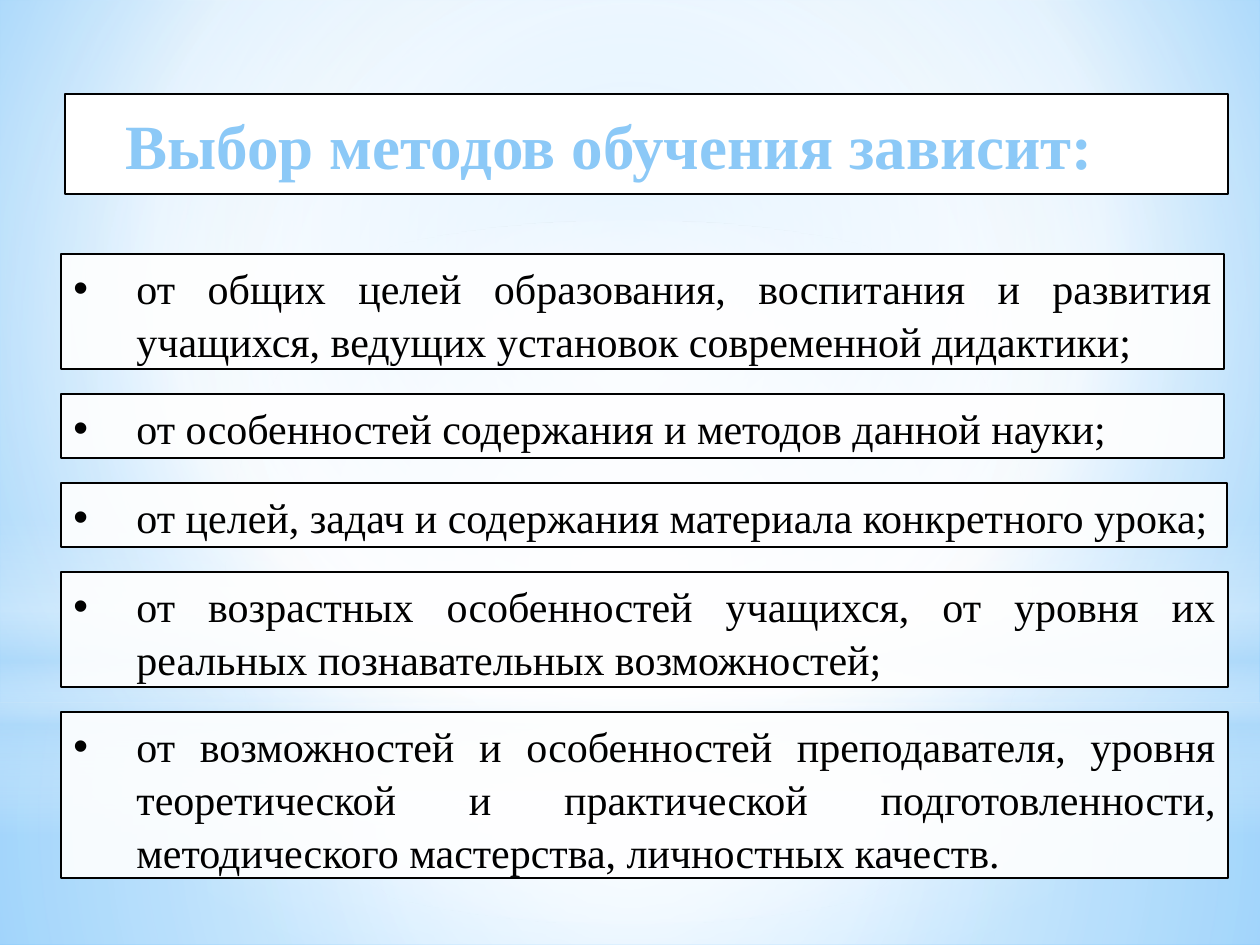
import pptx
import pptx.dml.color
import pptx.enum.shapes
import pptx.enum.text
import pptx.oxml
import pptx.oxml.ns
import pptx.util

WIDTH, HEIGHT = 1260, 945
EMU_PER_PX = 914400 / 126
FONT = "Times New Roman"
SHAPES = pptx.enum.shapes.MSO_SHAPE
ALIGN = pptx.enum.text.PP_ALIGN
qn = pptx.oxml.ns.qn

LINE, BOX_PADDING, BOX_GAP = 51, 13, 25
FACTORS = [  # text, number of lines, box width
    ("от общих целей образования, воспитания и развития учащихся, "
     "ведущих установок современной дидактики;", 2, 1163),
    ("от особенностей содержания и методов данной науки;", 1, 1163),
    ("от целей, задач и содержания материала конкретного урока;", 1, 1166),
    ("от возрастных особенностей учащихся, от уровня их реальных "
     "познавательных возможностей;", 2, 1167),
    ("от возможностей и особенностей преподавателя, уровня теоретической "
     "и практической подготовленности, методического мастерства, "
     "личностных качеств.", 3, 1167),
]


def px(length):
    return pptx.util.Emu(round(length * EMU_PER_PX))


def rgb(color):
    return pptx.dml.color.RGBColor.from_string(color)


def gradient(stops, center=None, angle=0):
    """Gradient fill from (position, colour, opacity) in percent; radial if center is given."""
    marks = "".join(
        f'<a:gs pos="{pos * 1000}"><a:srgbClr val="{color}">'
        f'<a:alpha val="{opacity * 1000}"/></a:srgbClr></a:gs>'
        for pos, color, opacity in stops)
    if center:
        sides = " ".join(f'{side}="{value * 1000}"' for side, value in zip("ltrb", center))
        course = f'<a:path path="circle"><a:fillToRect {sides}/></a:path>'
    else:
        course = f'<a:lin ang="{angle * 60000}" scaled="0"/>'
    return pptx.oxml.parse_xml(
        f'<a:gradFill {pptx.oxml.ns.nsdecls("a")} rotWithShape="1">'
        f'<a:gsLst>{marks}</a:gsLst>{course}</a:gradFill>')


def add_shape(slide, box, kind=SHAPES.RECTANGLE):
    shape = slide.shapes.add_shape(kind, *map(px, box))
    shape.shadow.inherit = False
    shape.line.fill.background()
    return shape


def style_panel(shape, opacity=100):
    """White panel with a thin black border."""
    shape.fill.solid()
    shape.fill.fore_color.rgb = rgb("FFFFFF")
    if opacity < 100:
        color = shape.fill._xPr.find(".//" + qn("a:srgbClr"))
        color.append(pptx.oxml.parse_xml(
            f'<a:alpha {pptx.oxml.ns.nsdecls("a")} val="{opacity * 1000}"/>'))
    shape.line.color.rgb = rgb("000000")
    shape.line.width = pptx.util.Pt(1.25)


def write(shape, text, size, color="000000", bold=False, align=ALIGN.LEFT,
          anchor=pptx.enum.text.MSO_ANCHOR.TOP, margin=0, indent=0,
          bullet=None, spacing=1.0):
    frame = shape.text_frame
    frame.word_wrap = True
    frame.auto_size = pptx.enum.text.MSO_AUTO_SIZE.NONE
    frame.vertical_anchor = anchor
    paragraph = frame.paragraphs[0]
    paragraph.alignment = align
    paragraph.line_spacing = spacing
    run = paragraph.add_run()
    run.text = text
    run.font.name = FONT
    run.font.size = pptx.util.Pt(size)
    run.font.bold = bold
    run.font.color.rgb = rgb(color)
    properties = paragraph._p.get_or_add_pPr()
    properties.set("marL", str(px(margin)))
    properties.set("indent", str(px(indent)))
    if bullet:
        for tag, name, value in (("a:buFont", "typeface", "Arial"),
                                 ("a:buChar", "char", bullet)):
            properties.append(pptx.oxml.parse_xml(
                f'<{tag} {pptx.oxml.ns.nsdecls("a")} {name}="{value}"/>'))


def add_backdrop(slide, width, height):
    fill = slide.background.fill
    fill.solid()
    solid = slide._element.find(".//" + qn("p:bgPr")).find(qn("a:solidFill"))
    solid.getparent().replace(solid, gradient(
        [(0, "9ED5FF", 100), (60, "FFFFFF", 100), (100, "5BB9FF", 100)], (20, 10, 20, 60)))

    white, blue, middle = "FFFFFF", "B4DCFA", (50, 50, 50, 50)
    horizon = 703
    layers = [
        ((0, horizon, width, height - horizon), SHAPES.RECTANGLE,
         gradient([(0, white, 91), (37, white, 76), (100, blue, 79)], middle)),
        ((0, 0, width, horizon), SHAPES.RECTANGLE,
         gradient([(0, white, 89), (48, white, 62), (100, blue, 79)], middle)),
        ((0, 519, width, 315), SHAPES.RECTANGLE,
         gradient([(0, white, 0), (29, white, 30), (45, blue, 40),
                   (55, white, 26), (65, blue, 60), (100, white, 0)], angle=90)),
        ((0, 221, width, horizon), SHAPES.OVAL,
         gradient([(0, white, 100), (56, white, 0)], middle)),
    ]
    for box, kind, blend in layers:
        layer = add_shape(slide, box, kind)
        layer.fill.solid()
        solid = layer._element.spPr.find(qn("a:solidFill"))
        solid.getparent().replace(solid, blend)


def place_title(slide, box, text):
    title = slide.shapes.title
    slide.shapes._spTree.append(title._element)  # in front of the backdrop
    title.left, title.top, title.width, title.height = map(px, box)
    style_panel(title)
    write(title, text, 36, color="8CC9F7", bold=True, indent=48,
          anchor=pptx.enum.text.MSO_ANCHOR.MIDDLE)


def add_factors(slide, left, top, factors):
    for text, lines, width in factors:
        height = BOX_PADDING + LINE * lines
        factor = add_shape(slide, (left, top, width, height))
        style_panel(factor, opacity=90)
        write(factor, text, 24, align=ALIGN.JUSTIFY, margin=63, indent=-63,
              bullet="•", spacing=1.05)
        top += height + BOX_GAP


def main():
    deck = pptx.Presentation()
    deck.slide_width, deck.slide_height = px(WIDTH), px(HEIGHT)
    slide = deck.slides.add_slide(deck.slide_layouts[5])
    add_backdrop(slide, WIDTH, HEIGHT)
    place_title(slide, (65, 94, 1163, 100), "Выбор методов обучения зависит:")
    add_factors(slide, 61, 254, FACTORS)
    deck.save("out.pptx")


if __name__ == "__main__":
    main()
